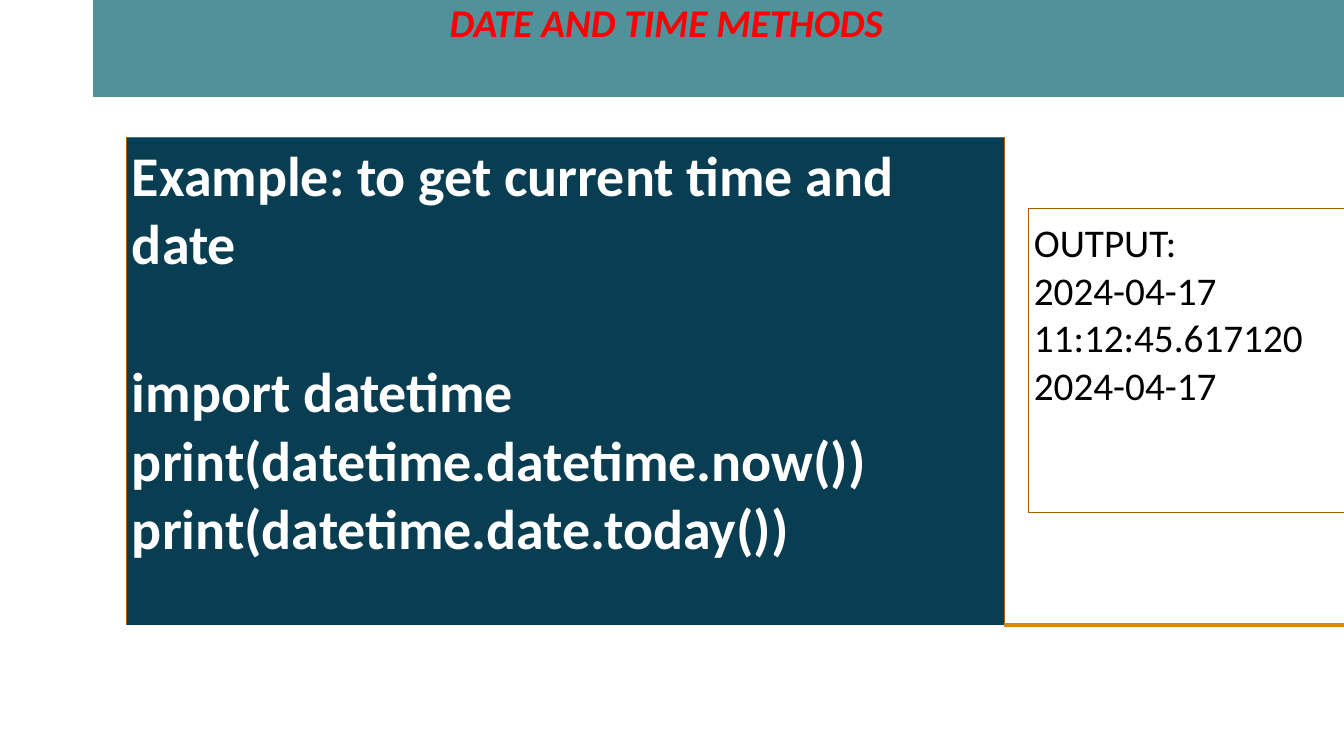
from lxml import etree
from pptx import Presentation
from pptx.dml.color import RGBColor
from pptx.oxml.ns import qn
from pptx.util import Pt

BLANK_LAYOUT = 6
NO_STYLE = "{2D5ABB26-0587-4C30-8999-92F81FD0307C}"
FONT = "Calibri"
COLORS = {
    "banner": "50919A",
    "title": "FF0000",
    "panel": "093D52",
    "code": "FFFFFF",
    "output": "000000",
    "frame": "A75F09",
    "rule": "E38312",
}
COLUMNS = (24.5, 627, 16.5, 220.5)
ROWS = (69, 29.2, 51, 216.8, 80.6)
# first row, first column, last row, last column
BANNER = (0, 0, 0, 3)
GAP = (1, 0, 1, 3)
LEFT_EDGE = (2, 0, 4, 0)
PANEL = (2, 1, 4, 1)
ABOVE_OUTPUT = (2, 2, 2, 3)
OUTPUT_GAP = (3, 2, 3, 2)
OUTPUT = (3, 3, 3, 3)
BELOW_OUTPUT = (4, 2, 4, 3)


def add_layout_table(slide):
    frame = slide.shapes.add_table(len(ROWS), len(COLUMNS), Pt(66.2), Pt(0),
                                   Pt(sum(COLUMNS)), Pt(sum(ROWS)))
    table = frame.table
    table.first_row = table.horz_banding = False
    table._tbl.tblPr.find(qn("a:tableStyleId")).text = NO_STYLE
    for column, width in zip(table.columns, COLUMNS):
        column.width = Pt(width)
    for row, height in zip(table.rows, ROWS):
        row.height = Pt(height)
    for cell in table.iter_cells():
        cell.fill.background()
    for top, left, bottom, right in (BANNER, GAP, LEFT_EDGE, PANEL,
                                     ABOVE_OUTPUT, BELOW_OUTPUT):
        table.cell(top, left).merge(table.cell(bottom, right))
    return table


def fill_area(table, area, color):
    cell = table.cell(*area[:2])
    cell.fill.solid()
    cell.fill.fore_color.rgb = RGBColor.from_string(COLORS[color])


def write_cell(cell, paragraphs, size, color, left=3.6, top=0, bold=False,
               italic=False, gap=0):
    """Fill a cell with paragraphs; gap is the space between them."""
    cell.margin_left, cell.margin_top = Pt(left), Pt(top)
    cell.margin_right = cell.margin_bottom = Pt(0)
    tf = cell.text_frame
    for i, text in enumerate(paragraphs):
        p = tf.add_paragraph() if i else tf.paragraphs[0]
        p.text = text
        p.space_before = Pt(gap if i else 0)
        p.font.name, p.font.size = FONT, Pt(size)
        p.font.bold, p.font.italic = bold, italic
        p.font.color.rgb = RGBColor.from_string(COLORS[color])


def draw_border(table, area, sides, color, width):
    """Rule the given sides (any of L, R, T, B) of an area of cells."""
    top, left, bottom, right = area
    for row in range(top, bottom + 1):
        for col in range(left, right + 1):
            edges = {"L": col == left, "R": col == right,
                     "T": row == top, "B": row == bottom}
            tc_pr = table.cell(row, col)._tc.get_or_add_tcPr()
            position = sum(child.tag.startswith(qn("a:ln")) for child in tc_pr)
            for side in sides:
                if edges[side]:
                    ln = etree.Element(qn(f"a:ln{side}"), w=str(Pt(width)))
                    fill = etree.SubElement(ln, qn("a:solidFill"))
                    etree.SubElement(fill, qn("a:srgbClr"), val=COLORS[color])
                    tc_pr.insert(position, ln)
                    position += 1


def main():
    prs = Presentation()
    prs.slide_width, prs.slide_height = Pt(960), Pt(540)
    slide = prs.slides.add_slide(prs.slide_layouts[BLANK_LAYOUT])
    table = add_layout_table(slide)

    fill_area(table, BANNER, "banner")
    write_cell(table.cell(*BANNER[:2]), ["DATE AND TIME METHODS"], 28, "title",
               left=255, bold=True, italic=True)

    fill_area(table, PANEL, "panel")
    write_cell(table.cell(*PANEL[:2]),
               ["Example: to get current time and date",
                "import datetime\vprint(datetime.datetime.now())\v"
                "print(datetime.date.today())"],
               40, "code", top=4.3, bold=True, gap=57)
    table.cell(*PANEL[:2]).margin_right = Pt(6)

    write_cell(table.cell(*OUTPUT[:2]),
               ["OUTPUT:", "2024-04-17 11:12:45.617120", "2024-04-17"],
               28, "output", top=7.9)

    for area, sides in ((LEFT_EDGE, "R"), (PANEL, "LRTB"), (ABOVE_OUTPUT, "L"),
                        (OUTPUT_GAP, "LR"), (OUTPUT, "LTB"), (BELOW_OUTPUT, "L")):
        draw_border(table, area, sides, "frame", 0.75)
    for area in (LEFT_EDGE, BELOW_OUTPUT):
        draw_border(table, area, "B", "rule", 3)

    prs.save("out.pptx")


if __name__ == "__main__":
    main()
